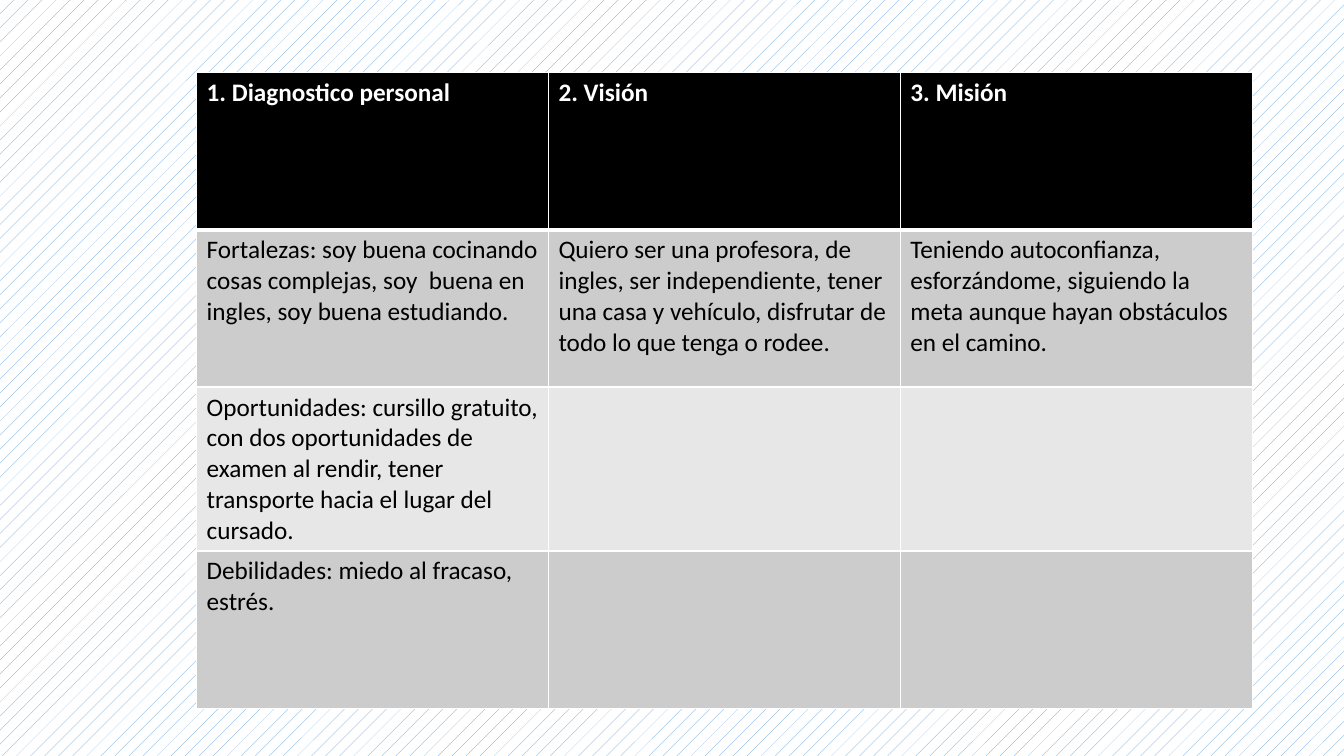
from lxml.etree import SubElement
from pptx import Presentation
from pptx.dml.color import RGBColor
from pptx.enum.dml import MSO_PATTERN
from pptx.oxml.ns import qn
from pptx.util import Inches, Pt

HEADER = ["1. Diagnostico personal", "2. Visión", "3. Misión"]
BODY = [
    [
        "Fortalezas: soy buena cocinando cosas complejas, soy  buena en ingles, soy buena estudiando.",
        "Quiero ser una profesora, de ingles, ser independiente, tener una casa y vehículo, "
        "disfrutar de todo lo que tenga o rodee.",
        "Teniendo autoconfianza, esforzándome, siguiendo la meta aunque hayan obstáculos en el camino.",
    ],
    [
        "Oportunidades: cursillo gratuito, con dos oportunidades de examen al rendir, "
        "tener transporte hacia el lugar del cursado.",
        "",
        "",
    ],
    ["Debilidades: miedo al fracaso, estrés.", "", ""],
]


def rgb(color):
    return RGBColor.from_string(color)


class SlideBuilder:
    font, size = "Calibri", Pt(18)
    white, black = "FFFFFF", "000000"
    bands = ["CCCCCC", "E7E7E7"]

    def __init__(self, slide):
        self.s = slide

    def background(self, fore, back):
        fill = self.s.background.fill
        fill.patterned()
        fill.pattern = MSO_PATTERN.PERCENT_5
        fill.fore_color.rgb = rgb(fore)
        fill.back_color.rgb = rgb(back)

    def borders(self, cell, **widths):
        """Draw white borders; widths maps the sides L, R, T, B to points."""
        tc_pr = cell._tc.get_or_add_tcPr()
        for side, width in widths.items():
            ln = SubElement(tc_pr, qn(f"a:ln{side}"), w=str(Pt(width)))
            SubElement(SubElement(ln, qn("a:solidFill")), qn("a:srgbClr"), val=self.white)

    def cell(self, cell, text, fill, color, bold):
        cell.fill.solid()
        cell.fill.fore_color.rgb = rgb(fill)
        cell.text = text
        font = cell.text_frame.paragraphs[0].font
        font.name, font.size, font.bold = self.font, self.size, bold
        font.color.rgb = rgb(color)

    def table(self, rows, left, top, col_width, row_height):
        n_rows, n_cols = len(rows), len(rows[0])
        table = self.s.shapes.add_table(
            n_rows, n_cols, left, top, col_width * n_cols, row_height * n_rows
        ).table
        for column in table.columns:
            column.width = col_width
        for i, texts in enumerate(rows):
            table.rows[i].height = row_height
            is_header = i == 0
            fill = self.black if is_header else self.bands[(i - 1) % 2]
            color = self.white if is_header else self.black
            for j, text in enumerate(texts):
                cell = table.cell(i, j)
                self.borders(cell, L=1, R=1, T=3 if i == 1 else 1, B=3 if is_header else 1)
                self.cell(cell, text, fill, color, is_header)


def main():
    prs = Presentation()
    prs.slide_width, prs.slide_height = Inches(13.33), Inches(7.5)
    builder = SlideBuilder(prs.slides.add_slide(prs.slide_layouts[6]))
    builder.background("5B9BD5", "FFFFFF")
    builder.table([HEADER] + BODY, Inches(1.95), Inches(0.72), Inches(3.49), Inches(1.56))
    prs.save("out.pptx")


if __name__ == "__main__":
    main()
